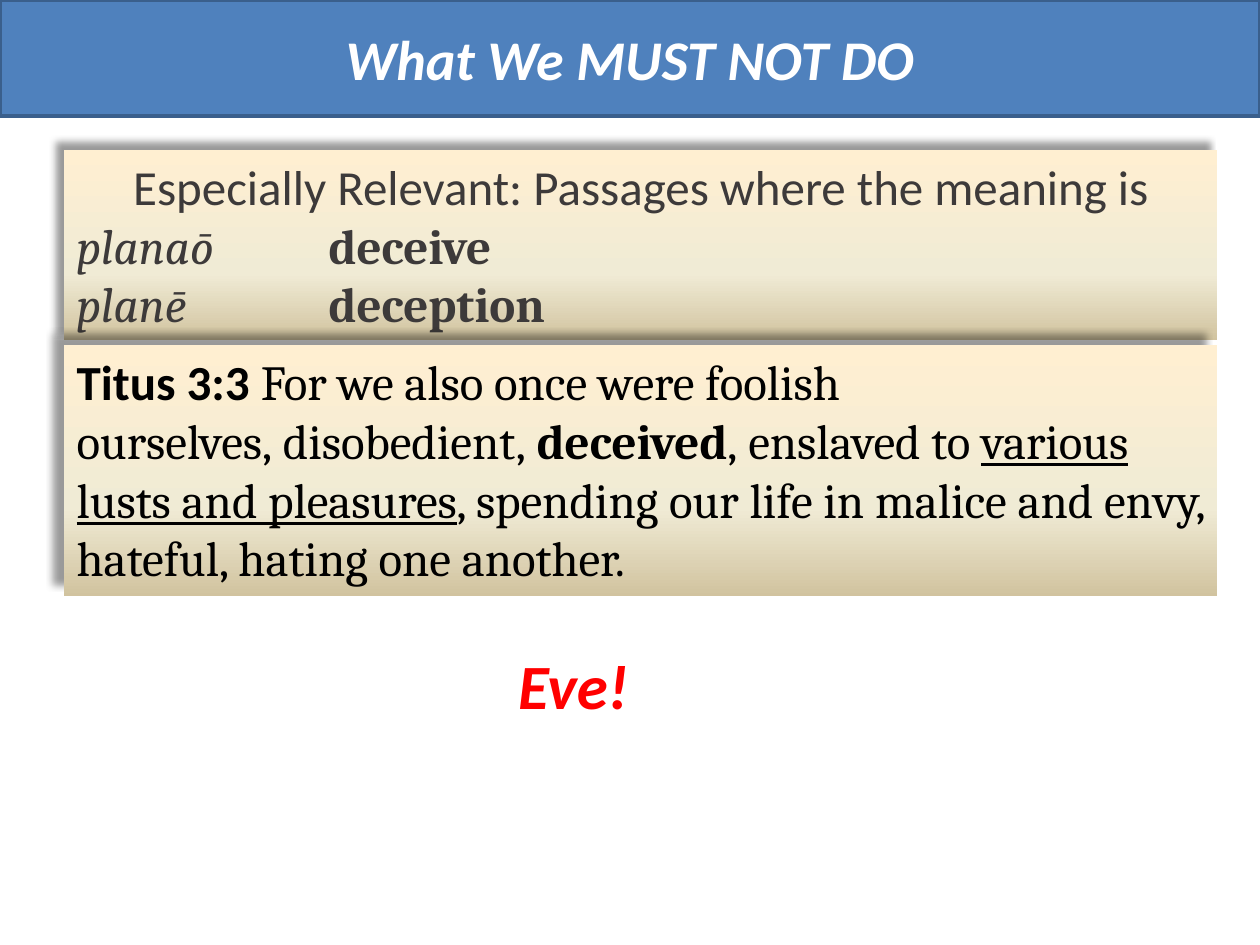
from pptx import Presentation
from pptx.dml.color import RGBColor
from pptx.enum import shapes, text
from pptx.oxml import parse_xml
from pptx.oxml.ns import nsdecls
from pptx.util import Inches, Pt

WHITE = RGBColor(0xFF, 0xFF, 0xFF)
BLACK = RGBColor(0, 0, 0)
RED = RGBColor(0xFF, 0, 0)
CHARCOAL = RGBColor(0x3D, 0x3A, 0x3A)
BANNER_BLUE = RGBColor(0x4F, 0x81, 0xBD)
BANNER_EDGE = RGBColor(0x3A, 0x5F, 0x8C)
PARCHMENT = [
    (0, RGBColor(0xFF, 0xEF, 0xD1)),
    (65, RGBColor(0xF0, 0xEB, 0xD5)),
    (100, RGBColor(0xD1, 0xC3, 0x9F)),
]

CENTER, LEFT = text.PP_ALIGN.CENTER, text.PP_ALIGN.LEFT
SANS = {"name": "Calibri"}
SERIF = {"name": "Cambria"}
BOLD, ITALIC, UNDERLINE = {"bold": True}, {"italic": True}, {"underline": True}
HARD_SPACE = chr(160)
TAB_STOPS = [1, 2]


def set_tab_stops(paragraph):
    stops = "".join(f'<a:tab pos="{Inches(stop)}" algn="l"/>' for stop in TAB_STOPS)
    properties = paragraph._p.get_or_add_pPr()
    properties.append(parse_xml(f'<a:tabLst {nsdecls("a")}>{stops}</a:tabLst>'))


def write_paragraphs(frame, paragraphs, size, color):
    """Fill a frame from (alignment, [(words, font values), ...]); ~ is a hard space."""
    frame.word_wrap = True
    for index, (alignment, runs) in enumerate(paragraphs):
        paragraph = frame.add_paragraph() if index else frame.paragraphs[0]
        paragraph.alignment = alignment
        if any("\t" in words for words, _ in runs):
            set_tab_stops(paragraph)
        for words, values in runs:
            run = paragraph.add_run()
            run.text = words.replace("~", HARD_SPACE)
            run.font.size = Pt(size)
            run.font.color.rgb = color
            for attribute, value in values.items():
                setattr(run.font, attribute, value)


def add_rectangle(slide, box):
    rectangle = slide.shapes.add_shape(shapes.MSO_SHAPE.RECTANGLE, *map(Inches, box))
    rectangle.shadow.inherit = False
    return rectangle


def add_banner(slide, box, title):
    banner = add_rectangle(slide, box)
    banner.fill.solid()
    banner.fill.fore_color.rgb = BANNER_BLUE
    banner.line.color.rgb = BANNER_EDGE
    banner.line.width = Pt(2)
    banner.text_frame.vertical_anchor = text.MSO_ANCHOR.MIDDLE
    write_paragraphs(banner.text_frame, [(CENTER, [(title, SANS | BOLD | ITALIC)])], 32, WHITE)


def style_parchment(panel, shadow_distance):
    """Give the panel a vertical three-stop gradient and an upper-left shadow."""
    panel.line.fill.background()
    stops = "".join(
        f'<a:gs pos="{percent * 1000}"><a:srgbClr val="{color}"/></a:gs>'
        for percent, color in PARCHMENT
    )
    gradient = parse_xml(
        f'<a:gradFill {nsdecls("a")} rotWithShape="1"><a:gsLst>{stops}</a:gsLst>'
        '<a:lin ang="5400000" scaled="0"/></a:gradFill>'
    )
    properties = panel.element.spPr
    properties.prstGeom.addnext(gradient)
    effects = properties.find(f"{{{properties.nsmap['a']}}}effectLst")
    effects.append(parse_xml(
        f'<a:outerShdw {nsdecls("a")} blurRad="{Pt(4)}" dist="{Pt(shadow_distance)}" '
        'dir="13500000" algn="br" rotWithShape="0">'
        f'<a:srgbClr val="{BLACK}"><a:alpha val="40000"/></a:srgbClr></a:outerShdw>'
    ))


def add_passage_panel(slide, box, paragraphs, color, shadow_distance):
    panel = add_rectangle(slide, box)
    style_parchment(panel, shadow_distance)
    panel.text_frame.vertical_anchor = text.MSO_ANCHOR.TOP
    write_paragraphs(panel.text_frame, paragraphs, 28, color)


def add_callout(slide, box, words):
    callout = slide.shapes.add_textbox(*map(Inches, box))
    write_paragraphs(callout.text_frame, [(CENTER, [(words, SANS | BOLD | ITALIC)])], 36, RED)


def main():
    deck = Presentation()
    deck.slide_width, deck.slide_height = Inches(10), Inches(7.5)
    slide = deck.slides.add_slide(deck.slide_layouts[6])

    meanings = [
        (CENTER, [("Especially Relevant: Passages where the meaning is", SANS)]),
        (LEFT, [("planaō\t", SERIF | ITALIC), ("deceive", SERIF | BOLD)]),
        (LEFT, [("planē \t\t", SERIF | ITALIC), ("deception", SERIF | BOLD)]),
    ]
    titus = [(LEFT, [
        ("Titus 3:3 ", SANS | BOLD),
        ("For we also once were foolish ourselves,~disobedient,~", SERIF),
        ("deceived", SERIF | BOLD),
        (",~enslaved to~", SERIF),
        ("various lusts and pleasures", SERIF | UNDERLINE),
        (", spending our life in~malice and~envy, hateful, hating one another.", SERIF),
    ])]

    add_banner(slide, (0, 0, 10, 0.92), "What We MUST NOT DO")
    add_passage_panel(slide, (0.51, 1.19, 9.15, 1.51), meanings, CHARCOAL, 7)
    add_passage_panel(slide, (0.51, 2.74, 9.15, 1.99), titus, BLACK, 9)
    add_callout(slide, (1.59, 5.08, 5.92, 0.71), "Eve!")
    deck.save("out.pptx")


if __name__ == "__main__":
    main()
